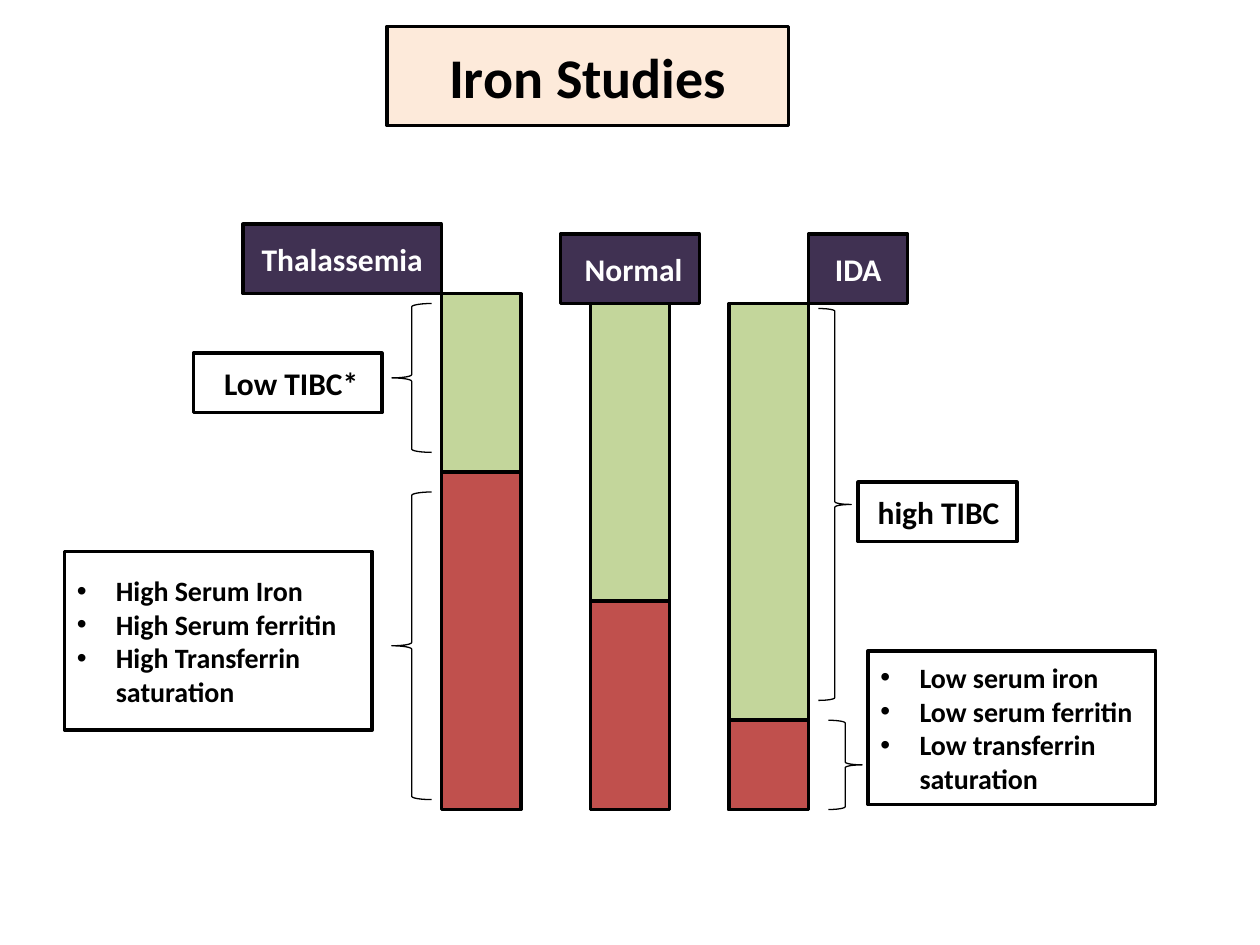
from lxml import etree
from pptx import Presentation
from pptx.dml.color import RGBColor
from pptx.enum.shapes import MSO_SHAPE
from pptx.enum.text import MSO_ANCHOR, PP_ALIGN
from pptx.oxml.ns import qn
from pptx.util import Inches, Mm, Pt

RECT = MSO_SHAPE.RECTANGLE
LEFT_BRACE, RIGHT_BRACE = MSO_SHAPE.LEFT_BRACE, MSO_SHAPE.RIGHT_BRACE
LEFT, CENTER = PP_ALIGN.LEFT, PP_ALIGN.CENTER
MIDDLE = MSO_ANCHOR.MIDDLE
BLACK = RGBColor(0x00, 0x00, 0x00)
WHITE = RGBColor(0xFF, 0xFF, 0xFF)
PEACH = RGBColor(0xFD, 0xEA, 0xDA)
PURPLE = RGBColor(0x40, 0x31, 0x52)
GREEN = RGBColor(0xC3, 0xD6, 0x9B)
RED = RGBColor(0xC0, 0x50, 0x4D)
FONT = "Calibri"
CELL = Mm(2)
BASE = 81.6
BAR_W, BAR_H, LABEL_H = 8, 51, 7


def cells(*box):
    return [round(v * CELL) for v in box]


def outline(sp, fill, weight=2):
    if fill is None:
        sp.fill.background()
    else:
        sp.fill.solid()
        sp.fill.fore_color.rgb = fill
    sp.line.color.rgb = BLACK
    sp.line.width = Pt(weight)


def add_part(s, kind, box, fill=None, weight=2):
    sp = s.shapes.add_shape(kind, *cells(*box))
    sp.shadow.inherit = False
    outline(sp, fill, weight)
    return sp


def write(sp, text, size, color=BLACK, align=CENTER):
    tf = sp.text_frame
    tf.word_wrap = True
    tf.vertical_anchor = MIDDLE
    tf.text = text
    for p in tf.paragraphs:
        p.alignment = align
        for r in p.runs:
            r.font.name = FONT
            r.font.size = Pt(size)
            r.font.bold = True
            r.font.color.rgb = color


def add_title(s, box, text):
    sp = s.shapes.title
    sp.left, sp.top, sp.width, sp.height = cells(*box)
    outline(sp, PEACH)
    write(sp, text, 32)


def add_bar(s, x, top, red_h, label, label_dx, label_w):
    add_part(s, RECT, (x, top, BAR_W, BAR_H), GREEN)
    add_part(s, RECT, (x, BASE - red_h, BAR_W, red_h), RED)
    tag = add_part(s, RECT, (x + label_dx, top - LABEL_H, label_w, LABEL_H), PURPLE)
    write(tag, label, 18, WHITE)


def add_note(s, box, text, align=CENTER):
    write(add_part(s, RECT, box, WHITE), text, 18, align=align)


def add_list(s, box, items):
    sp = add_part(s, RECT, box, WHITE)
    write(sp, "\n".join(items), 16, align=LEFT)
    indent = Inches(0.31)
    for p in sp.text_frame.paragraphs:
        pPr = p._p.get_or_add_pPr()
        pPr.set("marL", str(indent))
        pPr.set("indent", str(-indent))
        etree.SubElement(pPr, qn("a:buFont")).set("typeface", "Arial")
        etree.SubElement(pPr, qn("a:buChar")).set("char", "•")


def add_braces(s, kind, boxes):
    for box in boxes:
        add_part(s, kind, box, weight=0.75)


def main():
    prs = Presentation()
    prs.slide_width, prs.slide_height = Inches(10), Inches(7.5)
    s = prs.slides.add_slide(prs.slide_layouts[5])
    add_title(s, (39, 2.65, 40.5, 10), "Iron Studies")

    for bar in [
        (44.5, 29.6, 34, "Thalassemia", -20, 20),
        (59.5, 30.6, 21, " Normal", -3, 14),
        (73.5, 30.6, 9, "IDA", BAR_W, 10),
    ]:
        add_bar(s, *bar)

    add_braces(s, LEFT_BRACE, [(39.5, 30.6, 4, 15), (39.5, 49.6, 4, 31)])
    add_braces(s, RIGHT_BRACE, [(82.5, 31.1, 3.3, 39.5), (83.5, 72.6, 3.4, 9)])

    add_note(s, (19.5, 35.6, 19, 6), " Low TIBC*")
    add_note(s, (86.5, 48.6, 16, 6), " high TIBC", LEFT)
    add_list(s, (6.5, 55.6, 31, 18),
             ["High Serum Iron", "High Serum ferritin", "High Transferrin saturation"])
    add_list(s, (87.5, 65.6, 29, 15.5),
             ["Low serum iron", "Low serum ferritin", "Low transferrin saturation"])
    prs.save("out.pptx")


if __name__ == "__main__":
    main()
